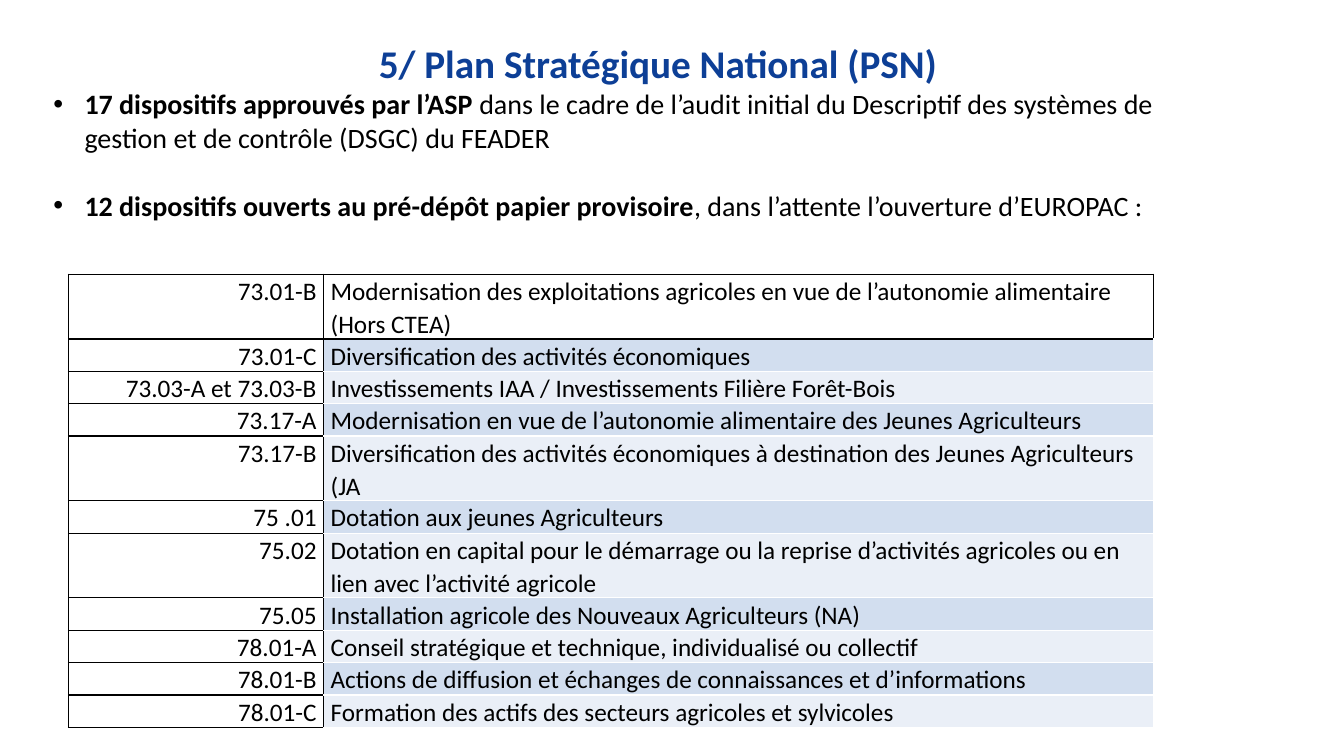
import pptx
import pptx.util
import pptx.dml.color
import pptx.enum.text
import pptx.oxml
import pptx.oxml.ns
import lxml.etree

Inches, Pt = pptx.util.Inches, pptx.util.Pt
RGBColor = pptx.dml.color.RGBColor
ALIGN = pptx.enum.text.PP_ALIGN

# Content
TITLE = "5/ Plan Stratégique National (PSN)"
BULLETS = [
    ("17 dispositifs approuvés par l’ASP ",
     "dans le cadre de l’audit initial du Descriptif des systèmes de gestion "
     "et de contrôle (DSGC) du FEADER"),
    ("12 dispositifs ouverts au pré-dépôt papier provisoire",
     ", dans l’attente l’ouverture d’EUROPAC :"),
]
# Code, label, number of text lines
MEASURES = [
    ("73.01-B", "Modernisation des exploitations agricoles en vue de l’autonomie "
                "alimentaire (Hors CTEA)", 2),
    ("73.01-C", "Diversification des activités économiques", 1),
    ("73.03-A et 73.03-B", "Investissements IAA / Investissements Filière Forêt-Bois", 1),
    ("73.17-A", "Modernisation en vue de l’autonomie alimentaire des Jeunes Agriculteurs", 1),
    ("73.17-B", "Diversification des activités économiques à destination des "
                "Jeunes Agriculteurs (JA", 2),
    ("75 .01", "Dotation aux jeunes Agriculteurs", 1),
    ("75.02", "Dotation en capital pour le démarrage ou la reprise d’activités "
              "agricoles ou en lien avec l’activité agricole", 2),
    ("75.05", "Installation agricole des Nouveaux Agriculteurs (NA)", 1),
    ("78.01-A", "Conseil stratégique et technique, individualisé ou collectif", 1),
    ("78.01-B", "Actions de diffusion et échanges de connaissances et d’informations", 1),
    ("78.01-C", "Formation des actifs des secteurs agricoles et sylvicoles", 1),
]

BLACK = RGBColor(0x00, 0x00, 0x00)
WHITE = RGBColor(0xFF, 0xFF, 0xFF)
NAVY = RGBColor(0x0D, 0x3F, 0x96)
BANDS = [RGBColor(0xEA, 0xEF, 0xF7), RGBColor(0xD2, 0xDE, 0xEF)]

FONT = "Calibri"
SLIDE_WIDTH, SLIDE_HEIGHT = 13.33, 7.5
COLUMNS = [2.53, 8.23]
LINE_HEIGHT = 0.32


def set_font(paragraph, size, color, bold=None):
    font = paragraph.font
    font.name, font.size, font.bold = FONT, Pt(size), bold
    font.color.rgb = color


def add_text_frame(slide, left, top, width, height):
    box = slide.shapes.add_textbox(Inches(left), Inches(top), Inches(width), Inches(height))
    box.text_frame.word_wrap = True
    return box.text_frame


def add_bullet(paragraph):
    properties = paragraph._p.get_or_add_pPr()
    properties.set("marL", str(Inches(0.31)))
    properties.set("indent", str(-Inches(0.31)))
    for tag, name, value in (("a:buFont", "typeface", "Arial"), ("a:buChar", "char", "•")):
        lxml.etree.SubElement(properties, pptx.oxml.ns.qn(tag)).set(name, value)


def set_borders(cell, colors):
    """Colours in the order left, right, top, bottom."""
    properties = cell._tc.get_or_add_tcPr()
    for position, (side, color) in enumerate(zip("LRTB", colors)):
        properties.insert(position, pptx.oxml.parse_xml(
            f'<a:ln{side} {pptx.oxml.ns.nsdecls("a")} w="{Pt(1)}"><a:solidFill>'
            f'<a:srgbClr val="{color}"/></a:solidFill></a:ln{side}>'))


def fill_cell(cell, text, align, fill, borders):
    cell.margin_left = cell.margin_right = Inches(0.07)
    cell.margin_top = cell.margin_bottom = 0
    cell.fill.solid()
    cell.fill.fore_color.rgb = fill
    set_borders(cell, borders)
    para = cell.text_frame.paragraphs[0]
    para.text, para.alignment, para.line_spacing = text, align, 1.07
    set_font(para, 18, BLACK, False)


def main():
    deck = pptx.Presentation()
    deck.slide_width, deck.slide_height = Inches(SLIDE_WIDTH), Inches(SLIDE_HEIGHT)
    slide = deck.slides.add_slide(deck.slide_layouts[6])

    # Bullets
    frame = add_text_frame(slide, 0.43, 0.81, 11.19, 1.45)
    for index, (lead, rest) in enumerate(BULLETS):
        para = frame.paragraphs[0] if index == 0 else frame.add_paragraph()
        add_bullet(para)
        if index:
            para.space_before = Pt(24.4)
        for text, bold in ((lead, True), (rest, False)):
            span = para.add_run()
            span.text, span.font.bold = text, bold
        set_font(para, 20, BLACK)

    # Table of measures
    height = LINE_HEIGHT * sum(lines for *_, lines in MEASURES)
    table = slide.shapes.add_table(
        len(MEASURES), len(COLUMNS), Inches(0.68), Inches(2.72),
        Inches(sum(COLUMNS)), Inches(height)).table
    for column, width in zip(table.columns, COLUMNS):
        column.width = Inches(width)
    for index, (code, label, lines) in enumerate(MEASURES):
        table.rows[index].height = Inches(LINE_HEIGHT * lines)
        fill_cell(table.cell(index, 0), code, ALIGN.RIGHT, WHITE, [BLACK] * 4)
        if index == 0:
            fill, borders = WHITE, [BLACK] * 4
        else:
            fill = BANDS[index % 2]
            borders = [BLACK, WHITE, BLACK if index == 1 else WHITE, WHITE]
        fill_cell(table.cell(index, 1), label, ALIGN.LEFT, fill, borders)

    # Title
    para = add_text_frame(slide, -0.14, 0.34, SLIDE_WIDTH, 0.57).paragraphs[0]
    para.text, para.alignment = TITLE, ALIGN.CENTER
    set_font(para, 28, NAVY, True)

    deck.save("out.pptx")


if __name__ == "__main__":
    main()
